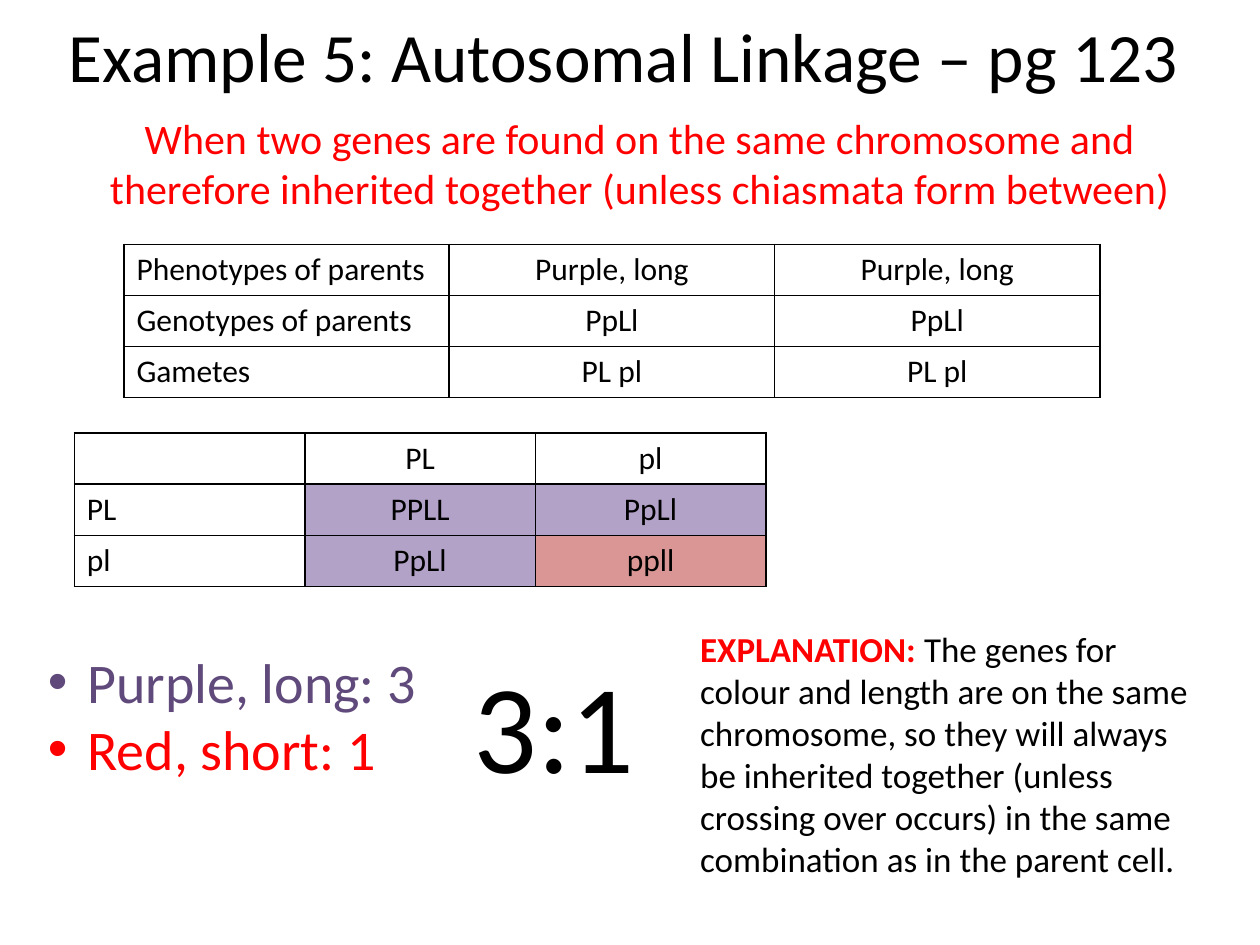
"""Build a genetics slide on autosomal linkage with two cross tables."""
import dataclasses

import lxml.etree
import pptx
import pptx.dml.color
import pptx.enum.text
import pptx.oxml.ns
import pptx.util

Pt = pptx.util.Pt
ALIGN = pptx.enum.text.PP_ALIGN
ANCHOR = pptx.enum.text.MSO_ANCHOR
FONT = "Calibri"
ROW_HEIGHT = 29.2
COLORS = {
    "black": "000000",
    "white": "FFFFFF",
    "red": "FF0000",
    "violet": "604A7B",
    "purple_cell": "B3A2C7",
    "red_cell": "D99694",
}


@dataclasses.dataclass(frozen=True)
class Box:
    left: float
    top: float
    width: float
    height: float


@dataclasses.dataclass(frozen=True)
class Run:
    text: str
    size: float
    color: str = "black"
    bold: bool = False


@dataclasses.dataclass(frozen=True)
class TextBox:
    box: Box
    runs: tuple[Run, ...]
    align: ALIGN = ALIGN.LEFT


@dataclasses.dataclass(frozen=True)
class Grid:
    left: float
    top: float
    col_width: float
    rows: tuple[tuple[str, ...], ...]
    fills: dict[str, str]


TITLE = Run("Example 5: Autosomal Linkage – pg 123", 39.6)
RATIOS = (Run("Purple, long: 3", 32, "violet"), Run("Red, short: 1", 32, "red"))
TEXT_BOXES = (
    TextBox(
        Box(31, 60.5, 669, 65.5),
        (Run("When two genes are found on the same chromosome and therefore "
             "inherited together (unless chiasmata form between)", 24, "red"),),
        ALIGN.CENTER,
    ),
    TextBox(Box(263.5, 366.5, 278, 94.5), (Run("3:1", 72),)),
    TextBox(
        Box(393, 355, 306, 152.5),
        (
            Run("EXPLANATION:", 20, "red", True),
            Run(" The genes for colour and length are on the same chromosome, "
                "so they will always be inherited together (unless crossing over "
                "occurs) in the same combination as in the parent cell.", 20),
        ),
    ),
)
GRIDS = (
    Grid(70.8, 139.7, 185.9, (
        ("Phenotypes of parents", "Purple, long", "Purple, long"),
        ("Genotypes of parents", "PpLl", "PpLl"),
        ("Gametes", "PL pl", "PL pl"),
    ), {}),
    Grid(42.5, 247.5, 131.7, (
        ("", "PL", "pl"),
        ("PL", "PPLL", "PpLl"),
        ("pl", "PpLl", "ppll"),
    ), {"PPLL": "purple_cell", "PpLl": "purple_cell", "ppll": "red_cell"}),
)


def rgb(name: str) -> pptx.dml.color.RGBColor:
    """Return the named colour."""
    return pptx.dml.color.RGBColor.from_string(COLORS[name])


def add_run(p, run: Run) -> None:
    """Append a formatted run to a paragraph."""
    r = p.add_run()
    r.text = run.text
    r.font.name = FONT
    r.font.size = Pt(run.size)
    r.font.bold = run.bold
    r.font.color.rgb = rgb(run.color)


def place(sp, box: Box) -> None:
    """Move and size a shape."""
    sp.left, sp.top = Pt(box.left), Pt(box.top)
    sp.width, sp.height = Pt(box.width), Pt(box.height)


def fill_title(sp) -> None:
    """Write the slide title."""
    place(sp, Box(18.7, -13.7, 675.4, 90))
    tf = sp.text_frame
    tf.vertical_anchor = ANCHOR.MIDDLE
    p = tf.paragraphs[0]
    p.alignment = ALIGN.CENTER
    add_run(p, TITLE)


def fill_ratios(sp) -> None:
    """Write the bulleted phenotype counts."""
    place(sp, Box(20.2, 366.5, 323.3, 106.5))
    tf = sp.text_frame
    for i, run in enumerate(RATIOS):
        p = tf.add_paragraph() if i else tf.paragraphs[0]
        p.space_before = Pt(0)
        add_run(p, run)
        pPr = p._p.get_or_add_pPr()
        pPr.set("marL", str(Pt(22.5)))
        pPr.set("indent", str(Pt(-22.5)))


def add_text(slide, item: TextBox) -> None:
    """Draw one wrapped text box."""
    sp = slide.shapes.add_textbox(0, 0, 0, 0)
    place(sp, item.box)
    tf = sp.text_frame
    tf.word_wrap = True
    p = tf.paragraphs[0]
    p.alignment = item.align
    for run in item.runs:
        add_run(p, run)


def add_borders(cell) -> None:
    """Outline a table cell in black."""
    qn = pptx.oxml.ns.qn
    tcPr = cell._tc.get_or_add_tcPr()
    for i, side in enumerate(("lnL", "lnR", "lnT", "lnB")):
        ln = lxml.etree.Element(qn(f"a:{side}"), w=str(Pt(1)))
        fill = lxml.etree.SubElement(ln, qn("a:solidFill"))
        lxml.etree.SubElement(fill, qn("a:srgbClr"), val=COLORS["black"])
        tcPr.insert(i, ln)


def add_grid(slide, grid: Grid) -> None:
    """Draw one bordered table."""
    n_rows, n_cols = len(grid.rows), len(grid.rows[0])
    table = slide.shapes.add_table(
        n_rows, n_cols, Pt(grid.left), Pt(grid.top),
        Pt(grid.col_width * n_cols), Pt(ROW_HEIGHT * n_rows),
    ).table
    table.first_row = table.horz_banding = False
    for i, texts in enumerate(grid.rows):
        for j, text in enumerate(texts):
            cell = table.cell(i, j)
            cell.fill.solid()
            cell.fill.fore_color.rgb = rgb(grid.fills.get(text, "white"))
            add_borders(cell)
            if text:
                p = cell.text_frame.paragraphs[0]
                p.alignment = ALIGN.CENTER if j else ALIGN.LEFT
                add_run(p, Run(text, 18))


def main() -> None:
    """Build and save the slide."""
    prs = pptx.Presentation()
    prs.slide_width, prs.slide_height = Pt(720), Pt(540)
    slide = prs.slides.add_slide(prs.slide_layouts[1])
    fill_title(slide.shapes.title)
    fill_ratios(slide.placeholders[1])
    for grid in GRIDS:
        add_grid(slide, grid)
    for item in TEXT_BOXES:
        add_text(slide, item)
    prs.save("out.pptx")


if __name__ == "__main__":
    main()
